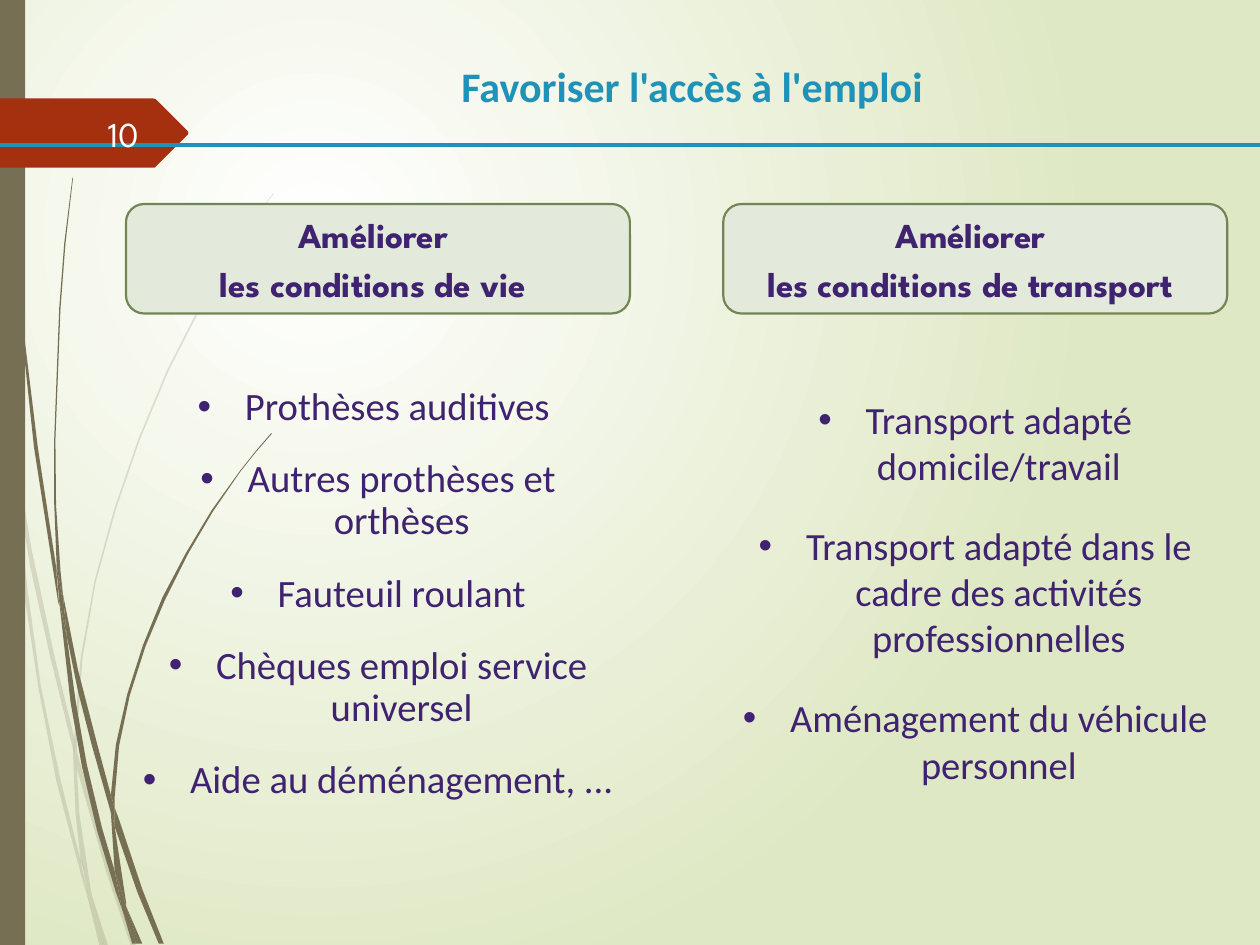
from lxml import etree
from pptx import Presentation
from pptx import util as u
from pptx.dml import color as c
from pptx.enum import shapes, text
from pptx.oxml import ns

Pt = u.Pt
rgb = c.RGBColor.from_string
GRID = 0.72
THEME = {
    "white": "FFFFFF", "green": "DFE8C4", "bark": "766F54", "tag": "A53010",
    "accent": "1F92B7", "ink": "3F2270", "panel": "E3E9DB", "edge": "728653",
    "number": "FEFFFF", "body_font": "Calibri", "head_font": "League Spartan",
    "title_size": 24, "head_size": 20, "left_size": 22.1, "right_size": 22,
}


def add_outline(parent, points, colour):
    (x, y), *rest = [(Pt(px * GRID), Pt(py * GRID)) for px, py in points]
    builder = parent.shapes.build_freeform(x, y)
    builder.add_line_segments(rest, close=True)
    shape = builder.convert_to_shape()
    shape.shadow.inherit = False
    shape.fill.solid()
    shape.fill.fore_color.rgb = rgb(THEME[colour])
    shape.line.fill.background()
    return shape


def write(para, words, font, size, colour, bold=False, **layout):
    for name, value in layout.items():
        setattr(para, name, value)
    span = para.add_run()
    span.text = words
    formats = {"name": THEME[font], "size": Pt(THEME[size]), "bold": bold}
    for name, value in formats.items():
        setattr(span.font, name, value)
    span.font.color.rgb = rgb(THEME[colour])


deck = Presentation()
deck.slide_width, deck.slide_height = Pt(720), Pt(540)
page = deck.slides.add_slide(deck.slide_layouts[3])
title, left_list, right_list = page.placeholders

fill = page.background.fill
fill.gradient()
for stop, colour in zip(fill.gradient_stops, ("white", "green")):
    stop.color.rgb = rgb(THEME[colour])
gradient = page.background._cSld.find(".//" + ns.qn("a:gradFill"))
gradient.remove(gradient.find(ns.qn("a:lin")))
circle = etree.SubElement(gradient, ns.qn("a:path"), {"path": "circle"})
etree.SubElement(circle, ns.qn("a:fillToRect"),
                 {"l": "50000", "t": "50000", "r": "100000", "b": "100000"})

pale_leaves = [
    [(8, 350), (6, 322), (0, 282), (0, 299), (7, 344)],
    [(40, 522), (59, 599), (59, 586), (43, 520), (24.5, 433), (10, 345),
     (12, 376), (24, 450)],
    [(64, 607), (61, 596), (61, 610), (85, 694), (104, 751), (108, 751), (88, 692)],
    [(83, 751), (86, 751), (73, 711)],
    [(64, 683), (48, 619), (32.5, 545), (22, 469), (12, 376), (8, 350), (19, 470),
     (30.5, 546), (45, 621), (64, 693), (70, 714), (69, 707)],
    [(58, 599), (60, 646), (64, 683), (67, 692), (73, 711), (72, 706), (63, 646),
     (61, 610), (61, 608)],
    [(61, 584), (65.5, 522), (76, 462), (92, 404), (111, 349), (133.5, 295),
     (159, 245), (187, 198), (201, 175), (217, 154), (217, 153), (201, 175),
     (186, 197), (158, 244), (132.5, 294), (110, 348), (91, 403), (75, 461),
     (64, 522), (59, 584), (59, 586), (61, 596)],
    [(70, 714), (79, 751), (82, 751)],
    [(61, 608), (61, 610), (61, 596), (59, 586), (58, 599)],
    [(67, 692), (65, 683), (69, 707), (70, 714), (82, 751), (83, 751), (73, 711)],
]
dark_leaves = [
    [(5, 110), (14, 233), (27, 355), (46, 477), (47, 481), (45, 457), (45, 453),
     (30, 355), (15, 232), (6, 109), (4, 48), (3, 0), (2, 0), (3, 48)],
    [(73, 592), (88, 645), (88, 633), (88, 631), (77, 590), (62, 532), (50, 472),
     (53, 505), (62, 549)],
    [(94, 649), (91, 641), (91, 656), (109, 708), (126, 749), (130, 749), (113, 706)],
    [(91, 691), (81, 657), (69, 607), (60, 556), (53, 505), (47, 477), (56, 557),
     (65, 608), (77, 659), (92, 708), (97, 722), (96, 717)],
    [(50, 472), (48, 453), (44.5, 401), (44, 349), (48, 245), (52, 193), (58, 141),
     (57.5, 141), (51, 193), (47, 245), (43, 349), (43, 399), (45, 449), (49, 472)],
    [(110, 749), (113, 749), (100, 719)],
    [(47, 477), (53, 505), (50, 472), (49, 472), (45, 449), (45, 453)],
    [(91, 633), (94.5, 592), (103, 552), (115.5, 513), (131, 476), (149, 440),
     (169, 406), (191, 374), (203, 359), (216, 344), (215, 344), (203, 358),
     (191, 373), (168, 405), (147.5, 439), (129, 474), (113.5, 512), (101, 551),
     (92, 591), (88, 631), (91, 641)],
    [(97, 722), (105, 749), (108, 749)],
    [(88, 645), (91, 691), (96, 706), (100, 719), (100, 716), (91, 656), (90, 651)],
    [(88, 645), (90, 651), (91, 656), (91, 641), (88, 631), (88, 633)],
    [(96, 706), (91, 691), (96, 717), (97, 722), (108, 749), (110, 749), (100, 719)],
]
for leaves, opacity in ((pale_leaves, 20), (dark_leaves, 100)):
    cluster = page.shapes.add_group_shape()
    for leaf in leaves:
        shape = add_outline(cluster, leaf, "bark")
        if opacity < 100:
            shade = shape.element.spPr.find(".//" + ns.qn("a:srgbClr"))
            etree.SubElement(shade, ns.qn("a:alpha"), {"val": str(opacity * 1000)})

strip = page.shapes.add_shape(shapes.MSO_SHAPE.RECTANGLE, 0, 0, Pt(14.4), Pt(540))
strip.shadow.inherit = False
strip.fill.solid()
strip.fill.fore_color.rgb = rgb(THEME["bark"])
strip.line.fill.background()
add_outline(page, [(149, 107), (124, 132), (123, 133), (121, 133), (111, 133), (0, 133),
                   (0, 78), (111, 78), (121, 78), (123, 78.5), (124, 79), (149, 104),
                   (149.5, 105.5)], "tag")

placements = [
    (title, 99.4, 15.1, 584, 55.4),
    (left_list, 72, 217.6, 288, 250.6),
    (right_list, 413.3, 222.5, 288, 244.8),
]
for box, *frame in placements:
    for name, value in zip(("left", "top", "width", "height"), frame):
        setattr(box, name, Pt(value))
    box.text_frame.auto_size = text.MSO_AUTO_SIZE.NONE
    box.text_frame.vertical_anchor = text.MSO_ANCHOR.TOP
    page.shapes.element.append(box.element)

title.text_frame.margin_top = Pt(19.2)
title.text_frame.margin_left = Pt(15.4)
write(title.text_frame.paragraphs[0], "Favoriser l'accès à l'emploi",
      "body_font", "title_size", "accent", True, alignment=text.PP_ALIGN.CENTER)

rule = page.shapes.add_connector(shapes.MSO_CONNECTOR.STRAIGHT,
                                 Pt(-121.7), Pt(82.8), Pt(949.7), Pt(82.8))
rule.line.color.rgb = rgb(THEME["accent"])
rule.line.width = Pt(2.25)
etree.SubElement(rule.element.spPr, ns.qn("a:effectLst"))

number = page.shapes.add_textbox(Pt(40.3), Pt(61.9), Pt(46), Pt(28.8))
number.text_frame.word_wrap = True
number.text_frame.vertical_anchor = text.MSO_ANCHOR.MIDDLE
write(number.text_frame.paragraphs[0], "10", "head_font", "head_size", "number",
      alignment=text.PP_ALIGN.RIGHT)

columns = [
    (left_list, "left_size", 0.9, 17.5, "les conditions de vie ",
     ["Prothèses auditives ", "Autres prothèses et orthèses", "Fauteuil roulant",
      "Chèques emploi service universel", "Aide au déménagement, ..."]),
    (right_list, "right_size", 1.0, 19.4, "les conditions de transport ",
     ["Transport adapté domicile/travail",
      "Transport adapté dans le cadre des activités professionnelles",
      "Aménagement du véhicule personnel"]),
]
for box, size, spacing, gap, heading, items in columns:
    panel = page.shapes.add_shape(shapes.MSO_SHAPE.ROUNDED_RECTANGLE,
                                  box.left, Pt(116.6), box.width, Pt(62.6))
    panel.shadow.inherit = False
    panel.fill.solid()
    panel.fill.fore_color.rgb = rgb(THEME["panel"])
    panel.line.color.rgb = rgb(THEME["edge"])
    panel.line.width = Pt(1.25)
    frame = panel.text_frame
    frame.vertical_anchor = text.MSO_ANCHOR.MIDDLE
    for i, words in enumerate(["Améliorer ", heading]):
        para = frame.add_paragraph() if i else frame.paragraphs[0]
        write(para, words, "head_font", "head_size", "ink", True,
              alignment=text.PP_ALIGN.CENTER, space_before=Pt(4))

    frame = box.text_frame
    for i, words in enumerate(items):
        para = frame.add_paragraph() if i else frame.paragraphs[0]
        write(para, words, "body_font", size, "ink", alignment=text.PP_ALIGN.CENTER,
              line_spacing=spacing, space_before=Pt(gap if i else 0))
        props = para._p.get_or_add_pPr()
        props.set("marL", str(Pt(27)))
        props.set("indent", str(-Pt(27)))
        etree.SubElement(props, ns.qn("a:buFont"), {"typeface": "Arial"})
        etree.SubElement(props, ns.qn("a:buChar"), {"char": "•"})

deck.save("out.pptx")
